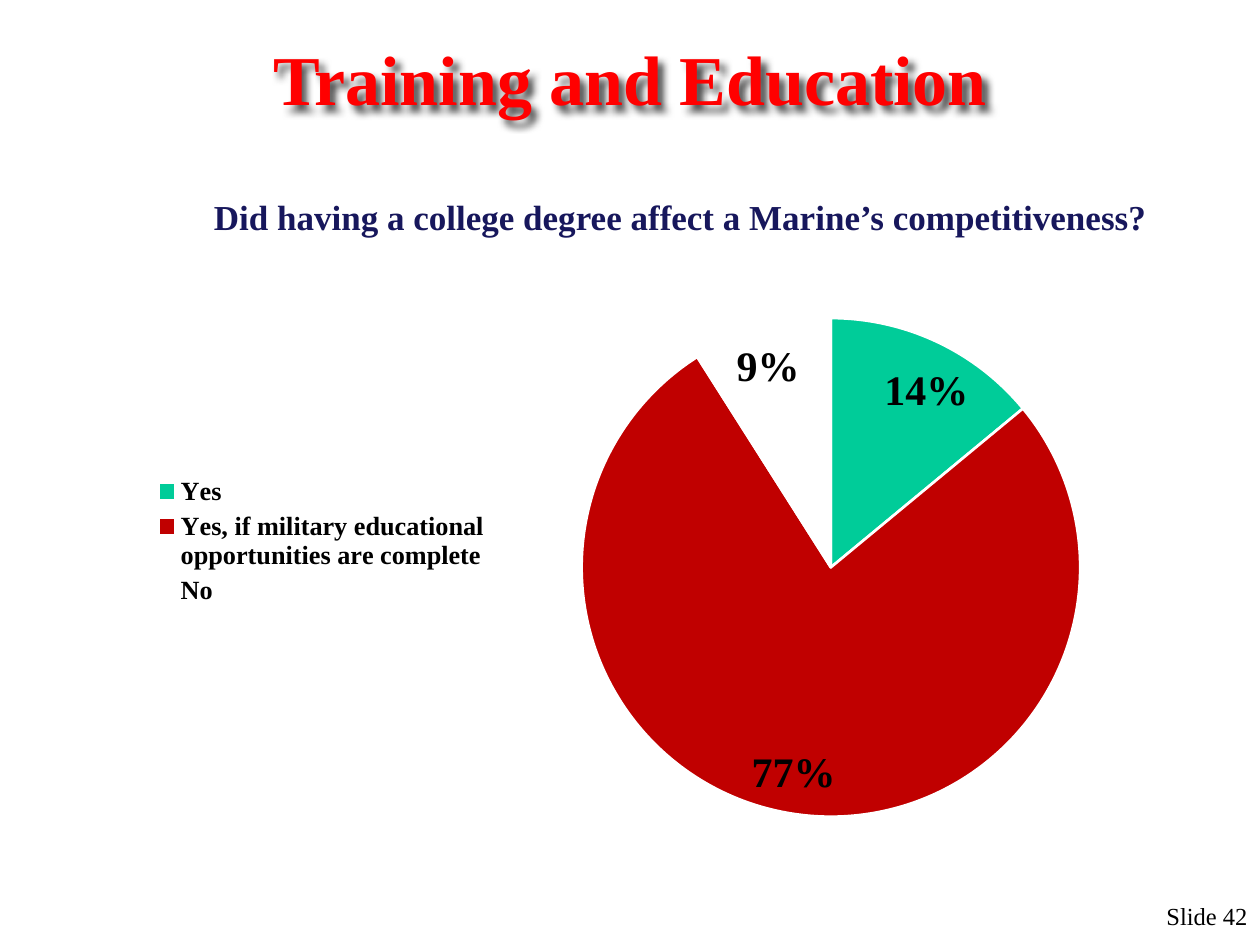
from lxml import etree
from pptx import Presentation
from pptx.chart.data import CategoryChartData
from pptx.dml.color import RGBColor as Rgb
from pptx.enum.chart import (XL_CHART_TYPE as Kind, XL_LABEL_POSITION as Spot,
                             XL_LEGEND_POSITION as Side)
from pptx.enum.text import MSO_ANCHOR as Anchor, PP_ALIGN as Align
from pptx.oxml import parse_xml
from pptx.oxml.ns import nsdecls, qn
from pptx.util import Inches, Pt

WIDE, HIGH = 10, 7.5
FACE = "Times New Roman"
INK = {"black": "000000", "red": "FF0000", "navy": "17175C",
       "green": "00CC99", "dark": "C00000", "white": "FFFFFF"}

# text, (left, top, width, height) as shares of the slide, align, anchor, font
TEXTS = [
    ("Slide 42", (0.76, 0.947, 0.24, 0.053), Align.RIGHT, Anchor.TOP,
     {"size": 14, "color": "black"}),
    ("Training and Education", (0, 0.044, 1, 0.077), Align.CENTER, Anchor.MIDDLE,
     {"size": 40, "color": "red", "bold": True}),
    ("Did having a college degree affect a Marine’s competitiveness?",
     (0.12, 0.2, 0.84, 0.09), Align.CENTER, Anchor.TOP,
     {"size": 20, "color": "navy", "bold": True}),
]
SLICES = [("Yes", 0.14, "green"),
          ("Yes, if military educational opportunities are complete", 0.77, "dark"),
          ("No", 0.09, "white")]
CHART = (0.108, 0.261, 0.842, 0.623)
# shares of the chart's own size
PIE = {"x": 0.42, "y": 0.12, "w": 0.47, "h": 0.85}
KEY = {"x": 0.01, "y": 0.38, "w": 0.33, "h": 0.24}


def place(box):
    return [Inches(part * full) for part, full in zip(box, (WIDE, HIGH) * 2)]


def style(font, size, color, bold=False):
    for name, value in {"name": FACE, "size": Pt(size), "bold": bold}.items():
        setattr(font, name, value)
    font.color.rgb = Rgb.from_string(INK[color])


def add_text(slide, text, box, align, anchor, form):
    shape = slide.shapes.add_textbox(*place(box))
    frame = shape.text_frame
    frame.word_wrap, frame.vertical_anchor = True, anchor
    para = frame.paragraphs[0]
    para.alignment = align
    run = para.add_run()
    run.text = text
    style(run.font, **form)
    return shape


def cast(shape):
    """Give the text of an unfilled box a soft shadow."""
    shape._element.spPr.append(parse_xml(
        f'<a:effectLst {nsdecls("a")}><a:outerShdw blurRad="50800" dist="50800" '
        'dir="2700000" algn="tl" rotWithShape="0"><a:srgbClr val="000000">'
        '<a:alpha val="70000"/></a:srgbClr></a:outerShdw></a:effectLst>'))


def lay_out(part, area, inner=False):
    """Fix the place of a chart part by hand."""
    for old in part.findall(qn("c:layout")):
        part.remove(old)
    layout = etree.Element(qn("c:layout"))
    hand = etree.SubElement(layout, qn("c:manualLayout"))
    rules = {"layoutTarget": "inner"} if inner else {}
    rules |= {"xMode": "edge", "yMode": "edge", **area}
    for name, value in rules.items():
        etree.SubElement(hand, qn(f"c:{name}")).set("val", str(value))
    if inner:
        part.insert(0, layout)
    else:
        part.find(qn("c:legendPos")).addnext(layout)


def add_pie(slide):
    data = CategoryChartData(number_format="0%")
    data.categories = [name for name, _, _ in SLICES]
    data.add_series("Series 1", [value for _, value, _ in SLICES])
    chart = slide.shapes.add_chart(Kind.PIE, *place(CHART), data).chart
    chart.has_title = False
    chart.font.name, chart.font.size = "Arial", Pt(10)
    chart.has_legend = True
    key = chart.legend
    key.position, key.include_in_layout = Side.LEFT, False
    style(key.font, 15, "black", True)
    lay_out(key._element, KEY)

    plot = chart.plots[0]
    plot.vary_by_categories = True
    lay_out(chart._chartSpace.chart.plotArea, PIE, inner=True)
    row = plot.series[0]
    for i, (_, _, color) in enumerate(SLICES):
        look = row.points[i].format
        look.fill.solid()
        look.fill.fore_color.rgb = Rgb.from_string(INK[color])
        look.line.color.rgb = Rgb.from_string(INK["white"])
        look.line.width = Pt(1.5)
    labels = row.data_labels
    form = {"show_value": True, "number_format": "0%",
            "number_format_is_linked": False, "position": Spot.BEST_FIT}
    for name, value in form.items():
        setattr(labels, name, value)
    style(labels.font, 24, "black", True)


def main():
    deck = Presentation()
    deck.slide_width, deck.slide_height = Inches(WIDE), Inches(HIGH)
    slide = deck.slides.add_slide(deck.slide_layouts[6])
    _, title, _ = [add_text(slide, *item) for item in TEXTS]
    cast(title)
    add_pie(slide)
    deck.save("out.pptx")


if __name__ == "__main__":
    main()
